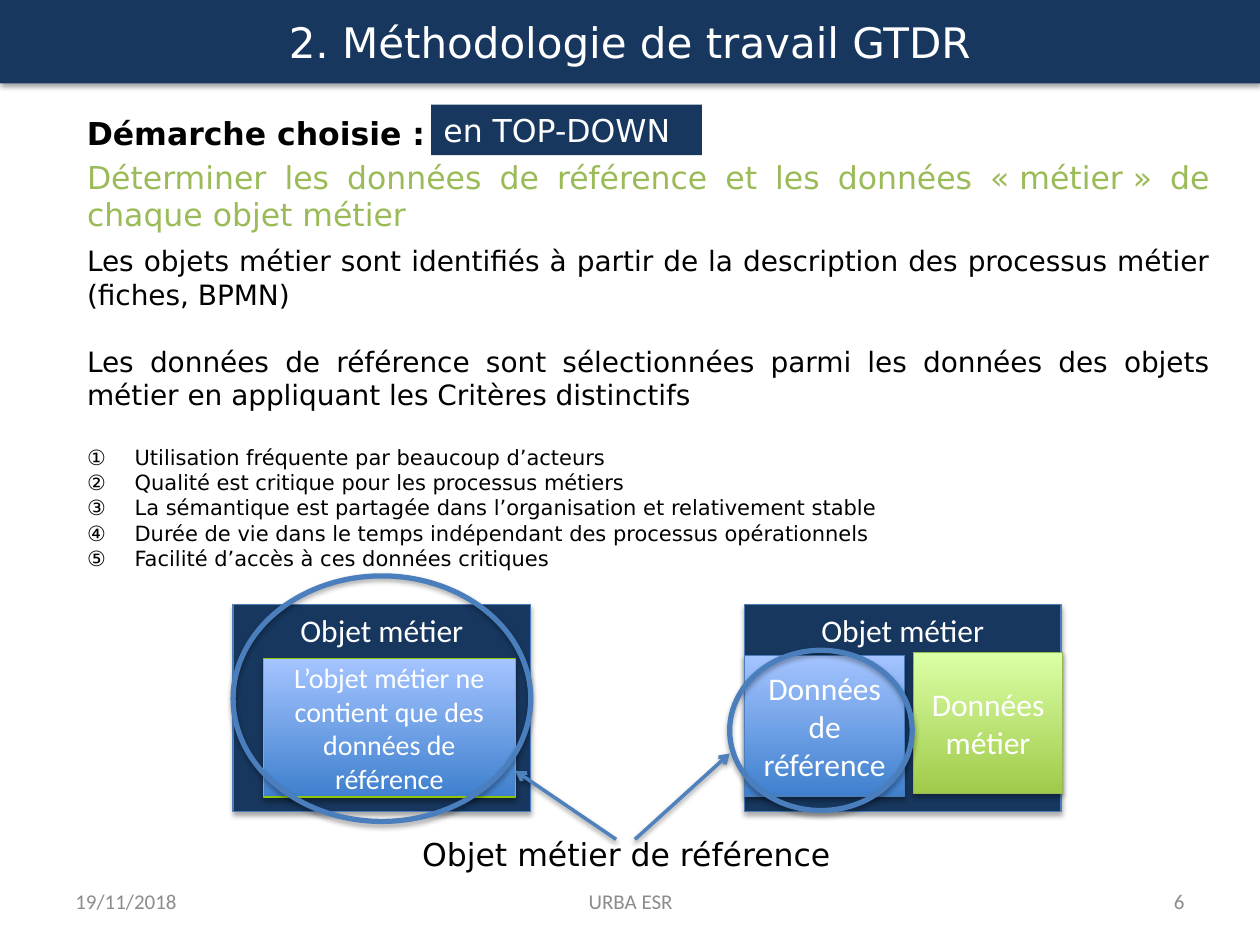
from lxml.etree import SubElement
from pptx import Presentation
from pptx.dml.color import RGBColor
from pptx.enum.shapes import MSO_CONNECTOR, MSO_SHAPE as Preset
from pptx.enum.text import MSO_ANCHOR as Anchor, MSO_AUTO_SIZE as AutoSize, PP_ALIGN as Align
from pptx.oxml.ns import qn
from pptx.util import Cm, Pt

COLORS = {name: RGBColor.from_string(code) for name, code in {
    "navy": "17375E", "outline": "4B7EBC", "arrow": "4F81BD",
    "blue_low": "3F80CE", "blue_high": "A4C4FF",
    "green_low": "A0CA4A", "green_high": "DAFFA5",
    "green_text": "9BBB59", "lime": "94C600", "olive": "98B955",
    "white": "FFFFFF", "black": "000000", "gray": "8C8C8C",
}.items()}
SANS, CALIBRI = "DejaVu Sans", "Calibri"


def add_run(paragraph, text, size, font, color, bold=False):
    run = paragraph.add_run()
    run.text = text
    run.font.size, run.font.name, run.font.bold = Pt(size), font, bold
    run.font.color.rgb = COLORS[color]


def cast_shadow(part, alpha=35, distance=1.8):
    """Call once fill and line are set, so that the effects come last."""
    effects = SubElement(part._element.spPr, qn("a:effectLst"))
    shadow = SubElement(effects, qn("a:outerShdw"), blurRad=str(Pt(3.1)),
                        dist=str(Pt(distance)), dir="5400000", rotWithShape="0")
    black = SubElement(shadow, qn("a:srgbClr"), val="000000")
    SubElement(black, qn("a:alpha"), val=str(alpha * 1000))


prs = Presentation()
prs.slide_width, prs.slide_height = Cm(25.4), Cm(19.05)
slide = prs.slides.add_slide(prs.slide_layouts[1])
shapes = slide.shapes

# Title band
title = shapes.title
title.left, title.top, title.width, title.height = Cm(0), Cm(0), Cm(25.4), Cm(1.68)
title.fill.solid()
title.fill.fore_color.rgb = COLORS["navy"]
cast_shadow(title)
title.text_frame.vertical_anchor = Anchor.MIDDLE
title.text_frame.paragraphs[0].alignment = Align.CENTER
add_run(title.text_frame.paragraphs[0], "2. Méthodologie de travail GTDR", 24, SANS, "white")

# Approach and numbered criteria: text, size, colour, space before, numbered
approach = [
    ("Déterminer les données de référence et les données «\u00a0métier\u00a0» de chaque objet métier",
     18, "green_text", 0, False),
    ("Les objets métier sont identifiés à partir de la description des processus métier (fiches, BPMN)",
     16, "black", 6, False),
    ("Les données de référence sont sélectionnées parmi les données des objets métier "
     "en appliquant les Critères distinctifs", 16, "black", 19, False),
    ("Utilisation fréquente par beaucoup d’acteurs", 12, "black", 19, True),
    ("Qualité est critique pour les processus métiers", 12, "black", 0, True),
    ("La sémantique est partagée dans l’organisation et relativement stable", 12, "black", 0, True),
    ("Durée de vie dans le temps indépendant des processus opérationnels", 12, "black", 0, True),
    ("Facilité d’accès à ces données critiques", 12, "black", 0, True),
]
body = slide.placeholders[1]
body.left, body.top, body.width, body.height = Cm(1.5), Cm(3.05), Cm(23.16), Cm(9.45)
body.text_frame.auto_size = AutoSize.NONE
for i, (text, size, color, gap, numbered) in enumerate(approach):
    paragraph = body.text_frame.add_paragraph() if i else body.text_frame.paragraphs[0]
    paragraph.alignment = Align.JUSTIFY
    paragraph.space_before = Pt(gap)
    props = paragraph._p.get_or_add_pPr()
    indent = Cm(0.96) if numbered else 0
    props.set("marL", str(indent))
    props.set("indent", str(-indent))
    if numbered:
        SubElement(props, qn("a:buFont"), typeface="+mj-lt")
        SubElement(props, qn("a:buAutoNum"), type="circleNumDbPlain")
    else:
        SubElement(props, qn("a:buNone"))
    add_run(paragraph, text, size, SANS, color)

# Business objects and their data, then the ellipses around the reference data
NAVY = ("navy",)
BLUE, GREEN = ("blue_low", "blue_high"), ("green_low", "green_high")
TOP, MIDDLE = Anchor.TOP, Anchor.MIDDLE
diagram = [
    (Preset.RECTANGLE, 4.7, 12.19, 6, 4.17, NAVY, "outline", 0.75, "Objet métier", 18, TOP),
    (Preset.RECTANGLE, 5.31, 13.28, 5.08, 2.79, BLUE, "lime", 0.75,
     "L’objet métier ne contient que des données de référence", 16, MIDDLE),
    (Preset.RECTANGLE, 15.01, 12.19, 6.38, 4.17, NAVY, "outline", 0.75, "Objet métier", 18, TOP),
    (Preset.RECTANGLE, 15.01, 13.21, 3.23, 2.84, BLUE, "outline", 0.75,
     "Données de référence", 18, MIDDLE),
    (Preset.RECTANGLE, 18.42, 13.16, 3, 2.84, GREEN, "olive", 0.75, "Données métier", 18, MIDDLE),
    (Preset.OVAL, 14.71, 13.11, 3.68, 3.23, (), "outline", 3, "", 18, MIDDLE),
    (Preset.OVAL, 4.7, 11.61, 6, 4.95, (), "outline", 3, "", 18, MIDDLE),
]
for preset, x, y, w, h, fill, line, weight, text, size, anchor in diagram:
    block = shapes.add_shape(preset, Cm(x), Cm(y), Cm(w), Cm(h))
    if len(fill) == 2:
        block.fill.gradient()
        block.fill.gradient_angle = 90
        for stop, color in zip(block.fill.gradient_stops, fill):
            stop.color.rgb = COLORS[color]
    elif fill:
        block.fill.solid()
        block.fill.fore_color.rgb = COLORS[fill[0]]
    else:
        block.fill.background()
    block.line.color.rgb = COLORS[line]
    block.line.width = Pt(weight)
    cast_shadow(block)
    if text:
        block.text_frame.word_wrap = True
        block.text_frame.vertical_anchor = anchor
        block.text_frame.paragraphs[0].alignment = Align.CENTER
        add_run(block.text_frame.paragraphs[0], text, size, CALIBRI, "white")

# Arrows from the caption to the reference data
for x1, y1, x2, y2 in [(12.42, 16.92, 10.39, 15.54), (12.8, 16.92, 14.71, 15.19)]:
    arrow = shapes.add_connector(MSO_CONNECTOR.STRAIGHT, Cm(x1), Cm(y1), Cm(x2), Cm(y2))
    arrow.line.color.rgb = COLORS["arrow"]
    arrow.line.width = Pt(2)
    SubElement(arrow.line._get_or_add_ln(), qn("a:tailEnd"), type="arrow")
    cast_shadow(arrow, alpha=38, distance=1.6)

# One-line labels
labels = [
    ("en TOP-DOWN", 8.69, 2.11, 5.46, "white", False, "navy"),
    ("Objet métier de référence", 8.26, 16.71, 8.86, "black", False, None),
    ("Démarche choisie :", 1.5, 2.18, 7.39, "black", True, None),
]
for text, x, y, w, color, bold, fill in labels:
    label = shapes.add_textbox(Cm(x), Cm(y), Cm(w), Cm(1.02))
    label.text_frame.word_wrap = False
    label.text_frame.auto_size = AutoSize.SHAPE_TO_FIT_TEXT
    if fill:
        label.fill.solid()
        label.fill.fore_color.rgb = COLORS[fill]
    add_run(label.text_frame.paragraphs[0], text, 18, SANS, color, bold)

# Footer
for text, x, w, align in [("19/11/2018", 1.27, 5.93, Align.LEFT),
                          ("URBA ESR", 8.69, 8.05, Align.CENTER),
                          ("6", 18.2, 5.93, Align.RIGHT)]:
    footer = shapes.add_textbox(Cm(x), Cm(17.65), Cm(w), Cm(1.02))
    footer.text_frame.word_wrap = True
    footer.text_frame.vertical_anchor = Anchor.MIDDLE
    footer.text_frame.paragraphs[0].alignment = align
    add_run(footer.text_frame.paragraphs[0], text, 12, CALIBRI, "gray")

prs.save("out.pptx")
